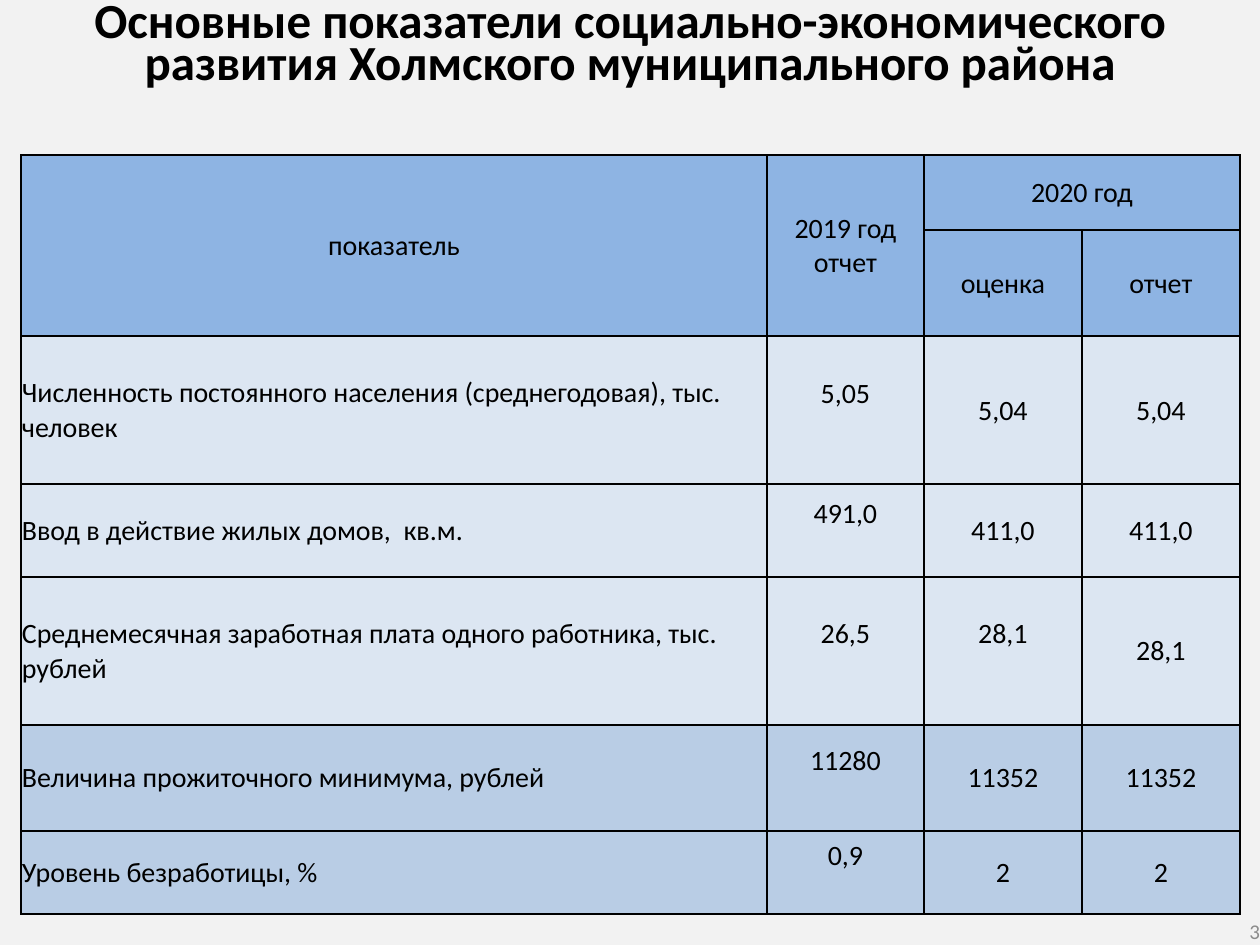
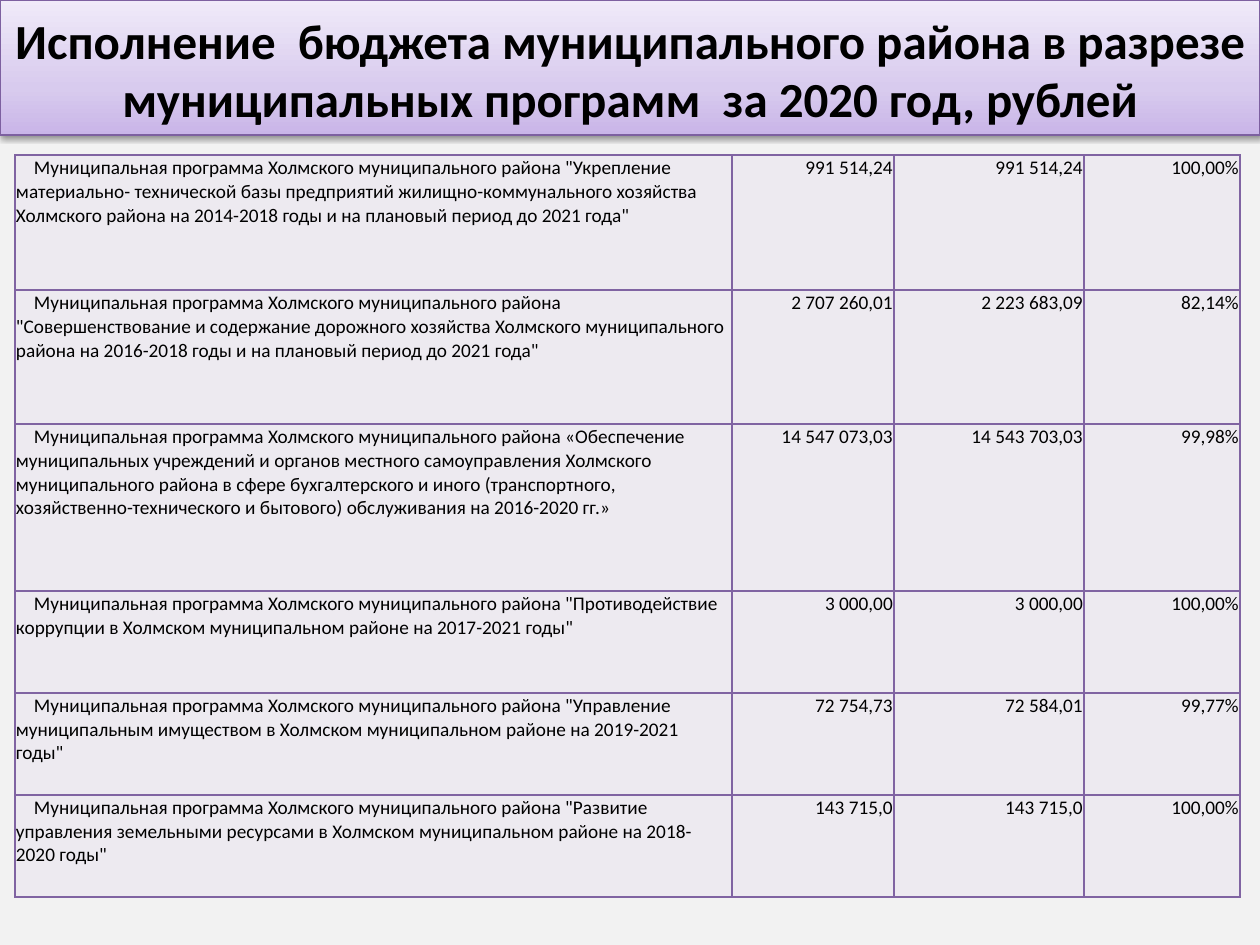
"""Builds two slides on the indicators and budget of a district."""
import lxml.etree
import pptx
import pptx.dml.color
import pptx.enum.shapes
import pptx.enum.text
import pptx.oxml
import pptx.oxml.ns
import pptx.util

RGB = pptx.dml.color.RGBColor
BACK = RGB(0xF2, 0xF2, 0xF2)
BLACK = RGB(0, 0, 0)
GREY = RGB(0x8C, 0x8C, 0x8C)
HEAD = RGB(0x8E, 0xB4, 0xE3)
PALE = RGB(0xDC, 0xE6, 0xF2)
MID = RGB(0xB9, 0xCD, 0xE5)
LILAC = RGB(0xED, 0xEA, 0xF0)
VIOLET = RGB(0x80, 0x64, 0xA2)
EDGE = RGB(0x7D, 0x60, 0xA0)
STOPS = {0: RGB(0xC9, 0xB5, 0xE8), 35: RGB(0xD8, 0xCB, 0xEE), 100: RGB(0xF0, 0xEA, 0xF9)}

ALIGN = pptx.enum.text.PP_ALIGN
ANCHOR = pptx.enum.text.MSO_ANCHOR
FONT = "Calibri"
SPACE = pptx.oxml.ns.nsdecls("a")
WIDE, HIGH = 1260, 945
LIFT = 34

TITLE = {"size": pptx.util.Pt(28), "bold": True}
FACTS = [
    ["показатель", "2019 год отчет", "2020 год", None],
    [None, None, "оценка", "отчет"],
    ["Численность постоянного населения (среднегодовая), тыс. человек", "5,05", "5,04", "5,04"],
    ["Ввод в действие жилых домов,  кв.м.", "491,0", "411,0", "411,0"],
    ["Среднемесячная заработная плата одного работника, тыс. рублей", "26,5", "28,1", "28,1"],
    ["Величина прожиточного минимума, рублей", "11280", "11352", "11352"],
    ["Уровень безработицы, %", "0,9", "2", "2"],
]
RAISED = {(row, 1) for row in range(2, 7)} | {(4, 2)}
OWNER = "Муниципальная программа Холмского муниципального района "
PLANS = [
    ['"Укрепление материально- технической базы предприятий жилищно-коммунального хозяйства '
     'Холмского района на 2014-2018 годы и на плановый период до 2021 года"',
     "991 514,24", "991 514,24", "100,00%"],
    ['"Совершенствование и содержание дорожного хозяйства Холмского муниципального района '
     'на 2016-2018 годы и на плановый период до 2021 года"',
     "2 707 260,01", "2 223 683,09", "82,14%"],
    ["«Обеспечение муниципальных учреждений и органов местного самоуправления Холмского "
     "муниципального района в сфере бухгалтерского и иного (транспортного, "
     "хозяйственно-технического и бытового) обслуживания на 2016-2020 гг.»",
     "14 547 073,03", "14 543 703,03", "99,98%"],
    ['"Противодействие коррупции в Холмском муниципальном районе на 2017-2021 годы"',
     "3 000,00", "3 000,00", "100,00%"],
    ['"Управление муниципальным имуществом в Холмском муниципальном районе на 2019-2021 годы"',
     "72 754,73", "72 584,01", "99,77%"],
    ['"Развитие управления земельными ресурсами в Холмском муниципальном районе '
     'на 2018-2020 годы"',
     "143 715,0", "143 715,0", "100,00%"],
]


def px(count):
    """Turn pixels into EMU."""
    return pptx.util.Emu(round(count * 914400 / 126))


def put(thing, **values):
    """Set each named value on a thing."""
    for name, value in values.items():
        setattr(thing, name, value)


def pad(thing, left, top, right, bottom):
    """Set the four inner margins in pixels."""
    put(thing, margin_left=px(left), margin_top=px(top),
        margin_right=px(right), margin_bottom=px(bottom))


def write(frame, text, style, color=BLACK, **lines):
    """Write one styled paragraph and return it."""
    para = frame.paragraphs[0]
    put(para, **lines)
    run = para.add_run()
    run.text = text
    put(run.font, name=FONT, **style)
    run.font.color.rgb = color
    return para


def shade(blur, dist, angle, alpha):
    """Make an outer shadow from points, degrees and percent."""
    return pptx.oxml.parse_xml(
        f'<a:effectLst {SPACE}><a:outerShdw blurRad="{pptx.util.Pt(blur)}" '
        f'dist="{pptx.util.Pt(dist)}" dir="{angle * 60000}" algn="ctr" rotWithShape="0">'
        f'<a:srgbClr val="{BLACK}"><a:alpha val="{alpha * 1000}"/></a:srgbClr>'
        '</a:outerShdw></a:effectLst>')


def start(deck):
    """Add a blank slide with the shared ground."""
    slide = deck.slides.add_slide(deck.slide_layouts[6])
    fill = slide.background.fill
    fill.solid()
    fill.fore_color.rgb = BACK
    return slide


def label(slide, box, text, style, inset, color=BLACK, anchor=ANCHOR.TOP, **lines):
    """Place a wrapped text box and return its paragraph."""
    frame = slide.shapes.add_textbox(*map(px, box)).text_frame
    put(frame, word_wrap=True, vertical_anchor=anchor)
    pad(frame, *inset)
    return write(frame, text, style, color, **lines)


def title(slide, box, text):
    """Place a bold title with shadowed letters."""
    para = label(slide, box, text, TITLE, (12, 6, 12, 6),
                 alignment=ALIGN.CENTER, line_spacing=pptx.util.Pt(24))
    mark = para.runs[0].font.fill
    mark.solid()
    mark.fore_color.rgb = BLACK
    props = para.runs[0]._r.get_or_add_rPr()
    props.find(pptx.oxml.ns.qn("a:solidFill")).addnext(shade(3, 3, 45, 45))


def band(slide, box, text):
    """Place a gradient title band."""
    shape = slide.shapes.add_shape(pptx.enum.shapes.MSO_SHAPE.RECTANGLE, *map(px, box))
    shape.shadow.inherit = False
    shape.line.color.rgb = EDGE
    shape.line.width = pptx.util.Pt(0.75)
    stops = "".join(f'<a:gs pos="{place * 1000}"><a:srgbClr val="{color}"/></a:gs>'
                    for place, color in STOPS.items())
    props = shape._element.spPr
    props.find(pptx.oxml.ns.qn("a:prstGeom")).addnext(pptx.oxml.parse_xml(
        f'<a:gradFill {SPACE} rotWithShape="1"><a:gsLst>{stops}</a:gsLst>'
        '<a:lin ang="16200000" scaled="0"/></a:gradFill>'))
    props.replace(props.find(pptx.oxml.ns.qn("a:effectLst")), shade(3.1, 1.6, 90, 38))
    frame = shape.text_frame
    put(frame, word_wrap=True, vertical_anchor=ANCHOR.TOP)
    pad(frame, 12, 10, 12, 6)
    write(frame, text, TITLE, alignment=ALIGN.CENTER)


def edge(cell, color):
    """Draw thin lines on all sides of a cell."""
    props = cell._tc.get_or_add_tcPr()
    for side in "LRTB":
        props.append(pptx.oxml.parse_xml(
            f'<a:ln{side} {SPACE} w="{pptx.util.Pt(1)}"><a:solidFill>'
            f'<a:srgbClr val="{color}"/></a:solidFill></a:ln{side}>'))


def grid(slide, spot, cols, rows, line, fills):
    """Place an empty ruled table, one fill for each row."""
    box = (*spot, sum(cols), sum(rows))
    table = slide.shapes.add_table(len(rows), len(cols), *map(px, box)).table
    put(table, first_row=False, horz_banding=False)
    for part, width in zip(table.columns, cols):
        part.width = px(width)
    for part, height, color in zip(table.rows, rows, fills):
        part.height = px(height)
        for cell in part.cells:
            pad(cell, 1, 1, 1, 0)
            edge(cell, line)
            cell.fill.solid()
            cell.fill.fore_color.rgb = color
    return table


def facts(slide, spot):
    """Fill the table of main indicators."""
    fills = [HEAD] * 2 + [PALE] * 3 + [MID] * 2
    table = grid(slide, spot, (746, 157, 158, 158),
                 (75, 106, 148, 93, 148, 106, 83), BLACK, fills)
    for first, last in (((0, 0), (1, 0)), ((0, 1), (1, 1)), ((0, 2), (0, 3))):
        table.cell(*first).merge(table.cell(*last))
    for row, texts in enumerate(FACTS):
        for col, text in enumerate(texts):
            if text is None:
                continue
            cell = table.cell(row, col)
            cell.vertical_anchor = ANCHOR.MIDDLE
            if (row, col) in RAISED:
                cell.margin_bottom = px(LIFT)
            align = ALIGN.LEFT if row > 1 and col == 0 else ALIGN.CENTER
            write(cell.text_frame, text, {"size": pptx.util.Pt(16)}, alignment=align)


def plans(slide, spot):
    """Fill the table of budget programmes."""
    rows = (135, 134, 167, 102, 102, 102)
    table = grid(slide, spot, (717, 162, 190, 156), rows, VIOLET, [LILAC] * len(rows))
    style = {"size": pptx.util.Pt(11)}
    for row, (name, *sums) in enumerate(PLANS):
        para = write(table.cell(row, 0).text_frame, OWNER + name, style, alignment=ALIGN.LEFT)
        para._p.get_or_add_pPr().set("indent", str(px(18)))
        for col, text in enumerate(sums, 1):
            write(table.cell(row, col).text_frame, text, style, alignment=ALIGN.RIGHT)


def main():
    """Build and save the deck."""
    deck = pptx.Presentation()
    put(deck, slide_width=px(WIDE), slide_height=px(HIGH))
    slide = start(deck)
    facts(slide, (21, 155))
    title(slide, (0, 0, WIDE, 128),
          "Основные показатели социально-экономического развития Холмского муниципального района")
    label(slide, (966, 918, 294, 27), "3", {"size": pptx.util.Pt(12)}, (0, 0, 0, 0),
          GREY, ANCHOR.MIDDLE, alignment=ALIGN.RIGHT)
    slide = start(deck)
    band(slide, (0, 0, WIDE, 135),
         "Исполнение  бюджета муниципального района в разрезе "
         "муниципальных программ  за 2020 год, рублей")
    plans(slide, (15, 155))
    deck.save("out.pptx")


if __name__ == "__main__":
    main()
